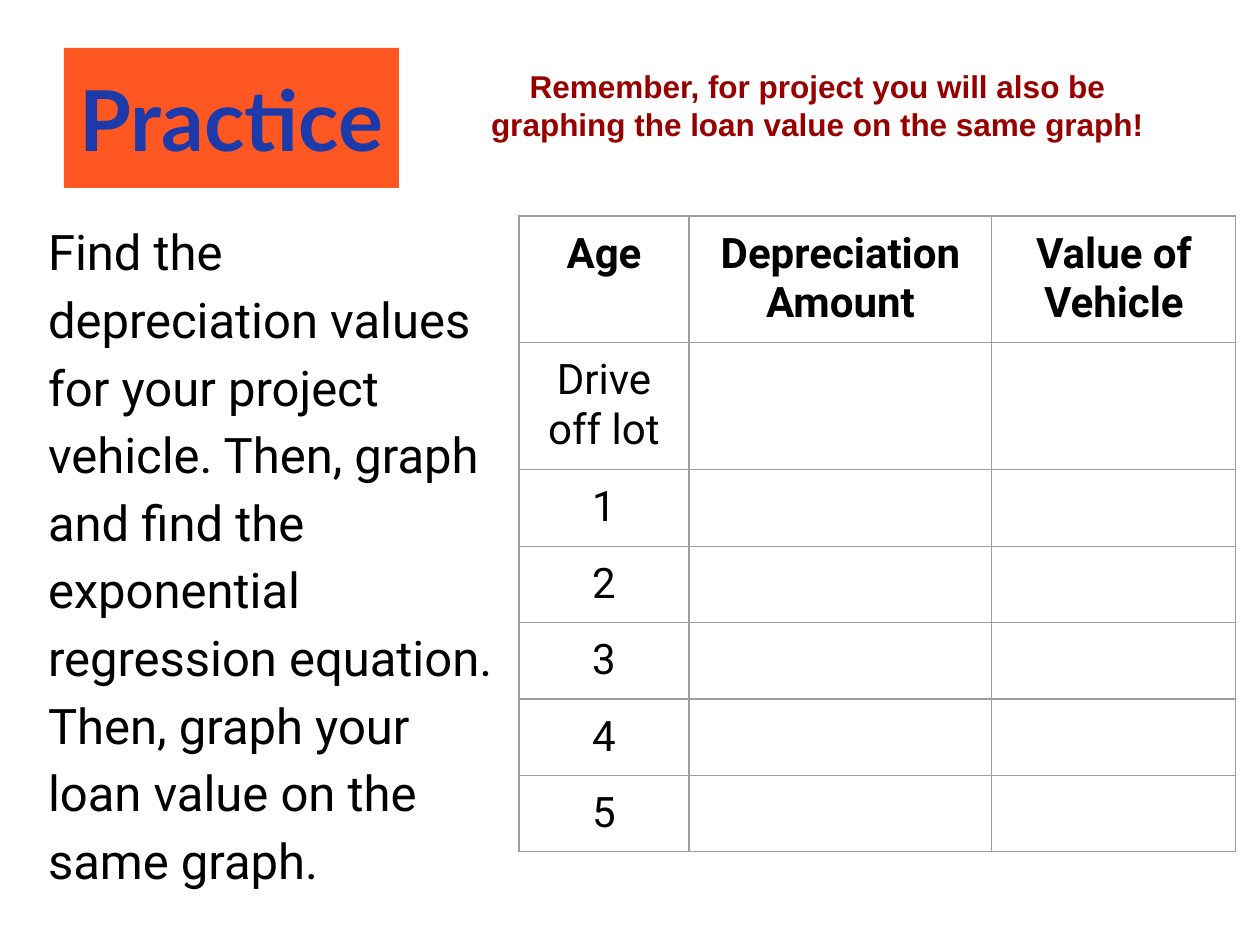
import pptx
import pptx.util
import pptx.dml.color
import pptx.enum.shapes
import pptx.enum.text
import pptx.oxml
import pptx.oxml.ns

ALIGN = pptx.enum.text.PP_ALIGN
ANCHOR = pptx.enum.text.MSO_ANCHOR
SCALE = 914400 / 126  # EMU in one px


def px(n):
    return pptx.util.Emu(round(n * SCALE))


def color(code):
    return pptx.dml.color.RGBColor.from_string(code)


def write(frame, text, size=24, font="Roboto", ink="000000", bold=False,
          align=ALIGN.CENTER, space=None):
    para = frame.paragraphs[0]
    para.alignment = align
    if space:
        para.line_spacing = space
    run = para.add_run()
    run.text = text
    run.font.size = pptx.util.Pt(size)
    run.font.name = font
    run.font.bold = bold
    run.font.color.rgb = color(ink)


class Page:
    pad = 13
    rule = "9E9E9E"
    width = 0.75

    def __init__(self, deck):
        self.slide = deck.slides.add_slide(deck.slide_layouts[6])

    def inset(self, part):
        part.margin_left = part.margin_right = px(self.pad)
        part.margin_top = part.margin_bottom = px(self.pad)

    def fit(self, frame, anchor):
        frame.word_wrap = True
        frame.vertical_anchor = anchor
        self.inset(frame)

    def block(self, box, fill, text, **style):
        kind = pptx.enum.shapes.MSO_SHAPE.RECTANGLE
        shape = self.slide.shapes.add_shape(kind, *map(px, box))
        shape.shadow.inherit = False
        shape.fill.solid()
        shape.fill.fore_color.rgb = color(fill)
        shape.line.fill.background()
        self.fit(shape.text_frame, ANCHOR.MIDDLE)
        write(shape.text_frame, text, **style)

    def text(self, box, text, **style):
        frame = self.slide.shapes.add_textbox(*map(px, box)).text_frame
        self.fit(frame, ANCHOR.TOP)
        write(frame, text, **style)

    def border(self, cell):
        props = cell._tc.get_or_add_tcPr()
        for i, side in enumerate("LRTB"):
            line = pptx.oxml.parse_xml(
                f'<a:ln{side} {pptx.oxml.ns.nsdecls("a")} '
                f'w="{pptx.util.Pt(self.width)}"><a:solidFill>'
                f'<a:srgbClr val="{self.rule}"/></a:solidFill></a:ln{side}>')
            props.insert(i, line)

    def table(self, left, top, cols, rows, data):
        box = (left, top, sum(cols), sum(rows))
        table = self.slide.shapes.add_table(
            len(rows), len(cols), *map(px, box)).table
        table.first_row = table.horz_banding = False
        for col, wide in zip(table.columns, cols):
            col.width = px(wide)
        for r, (row, high) in enumerate(zip(table.rows, rows)):
            row.height = px(high)
            for cell, text in zip(row.cells, data[r]):
                self.inset(cell)
                cell.fill.background()
                self.border(cell)
                if text:
                    write(cell.text_frame, text, bold=r == 0)


def main():
    deck = pptx.Presentation()
    deck.slide_width, deck.slide_height = px(1260), px(945)
    page = Page(deck)

    # Title
    page.block((64, 48, 335, 140), "FF5722", "Practice",
               size=48, font="Lato", ink="1C3AA9", bold=True)

    # Task
    page.text((35, 200, 473, 639),
              "Find the depreciation values for your project vehicle. "
              "Then, graph and find the exponential regression equation. "
              "Then, graph your loan value on the same graph.",
              size=28, align=ALIGN.LEFT, space=1.15)

    # Value table
    ages = ["Drive off lot", *map(str, range(1, 6))]
    data = [("Age", "Depreciation Amount", "Value of Vehicle")]
    data += [(age, "", "") for age in ages]
    page.table(519, 216, [170, 303, 244], [123] * 2 + [76] * 5, data)

    # Reminder
    page.text((459, 54, 717, 121),
              "Remember, for project you will also be graphing "
              "the loan value on the same graph!",
              size=18, font="Arial", ink="980000", bold=True)

    deck.save("out.pptx")


if __name__ == "__main__":
    main()
